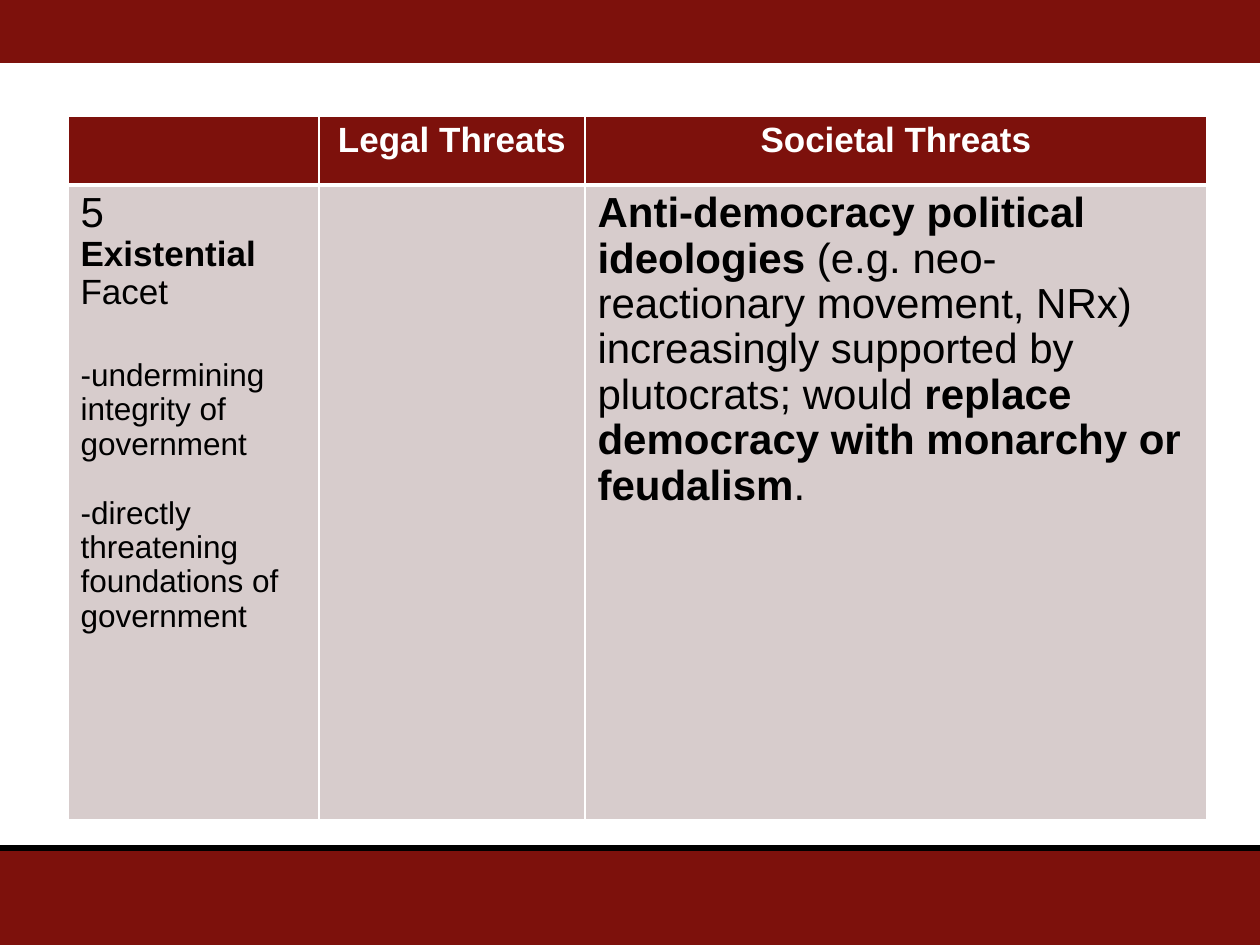
from dataclasses import dataclass

from lxml import etree
from pptx import Presentation
from pptx.dml.color import RGBColor
from pptx.enum.shapes import MSO_CONNECTOR, MSO_SHAPE
from pptx.enum.text import PP_ALIGN
from pptx.oxml.ns import qn
from pptx.util import Emu, Pt

RECTANGLE = MSO_SHAPE.RECTANGLE
STRAIGHT = MSO_CONNECTOR.STRAIGHT
CENTER, LEFT = PP_ALIGN.CENTER, PP_ALIGN.LEFT
BLANK_LAYOUT = 6


@dataclass(frozen=True)
class Theme:
    maroon: str = "7D110C"
    cell: str = "D7CCCC"
    black: str = "000000"
    white: str = "FFFFFF"
    font: str = "Arial"
    large: int = 24
    medium: int = 20
    small: int = 18
    line_spacing: float = 0.97


THEME = Theme()


def px(length):
    """Turn pixels, 126 to the inch, into EMU."""
    return Emu(round(length * 914400 / 126))


def add_borders(cell, widths):
    """Draw white borders, given in points for each side tag."""
    properties = cell._tc.get_or_add_tcPr()
    for index, (side, width) in enumerate(widths.items()):
        border = etree.Element(qn(f"a:{side}"), w=str(Pt(width)))
        fill = etree.SubElement(border, qn("a:solidFill"))
        etree.SubElement(fill, qn("a:srgbClr"), val=THEME.white)
        properties.insert(index, border)


deck = Presentation()
deck.slide_width, deck.slide_height = px(1260), px(945)
page = deck.slides.add_slide(deck.slide_layouts[BLANK_LAYOUT])

# Bars at the top and bottom, with a black rule above the lower one
for top, height in ((0, 63), (851, 94)):
    bar = page.shapes.add_shape(RECTANGLE, 0, px(top), px(1260), px(height))
    bar.shadow.inherit = False
    bar.fill.solid()
    bar.fill.fore_color.rgb = RGBColor.from_string(THEME.maroon)
    bar.line.fill.background()

rule = page.shapes.add_connector(STRAIGHT, 0, px(848), px(1260), px(848))
rule.line.color.rgb = RGBColor.from_string(THEME.black)
rule.line.width = Pt(3.75)
etree.SubElement(rule._element.spPr, qn("a:effectLst"))

# Each paragraph is (space before in px, runs); each run is (text, size, bold)
header = [
    [],
    [(0, [("Legal Threats", THEME.medium, True)])],
    [(0, [("Societal Threats", THEME.medium, True)])],
]
facet = [
    (0, [("5", THEME.large, False)]),
    (0, [("Existential", THEME.medium, True), (" Facet", THEME.medium, False)]),
    (47, [("-undermining integrity of government", THEME.small, False)]),
    (35, [("-directly threatening foundations of government", THEME.small, False)]),
]
societal = [
    (0, [
        ("Anti-democracy political ideologies ", THEME.large, True),
        ("(e.g. neo-reactionary movement, NRx) increasingly supported by "
         "plutocrats; would ", THEME.large, False),
        ("replace democracy with monarchy or feudalism", THEME.large, True),
        (".", THEME.large, False),
    ]),
]
# Each row is (height, fill, text colour, alignment, top and bottom border, cells)
rows = [
    (69, THEME.maroon, THEME.white, CENTER, (1, 3), header),
    (635, THEME.cell, THEME.black, LEFT, (3, 1), [facet, [], societal]),
]
column_widths = [251, 266, 622]

frame = page.shapes.add_table(len(rows), len(column_widths), px(68), px(116),
                              px(sum(column_widths)), px(sum(row[0] for row in rows)))
table = frame.table
table.horz_banding = False
for column, width in zip(table.columns, column_widths):
    column.width = px(width)

for row, (height, fill, color, align, (above, below), contents) in zip(table.rows, rows):
    row.height = px(height)
    for cell, paragraphs in zip(row.cells, contents):
        cell.fill.solid()
        cell.fill.fore_color.rgb = RGBColor.from_string(fill)
        add_borders(cell, {"lnL": 1, "lnR": 1, "lnT": above, "lnB": below})
        for index, (space, runs) in enumerate(paragraphs):
            text = cell.text_frame
            para = text.add_paragraph() if index else text.paragraphs[0]
            para.alignment = align
            para.line_spacing = THEME.line_spacing
            if space:
                para.space_before = px(space)
            for words, size, bold in runs:
                span = para.add_run()
                span.text = words
                span.font.name = THEME.font
                span.font.size = Pt(size)
                span.font.bold = bold
                span.font.color.rgb = RGBColor.from_string(color)

deck.save("out.pptx")
